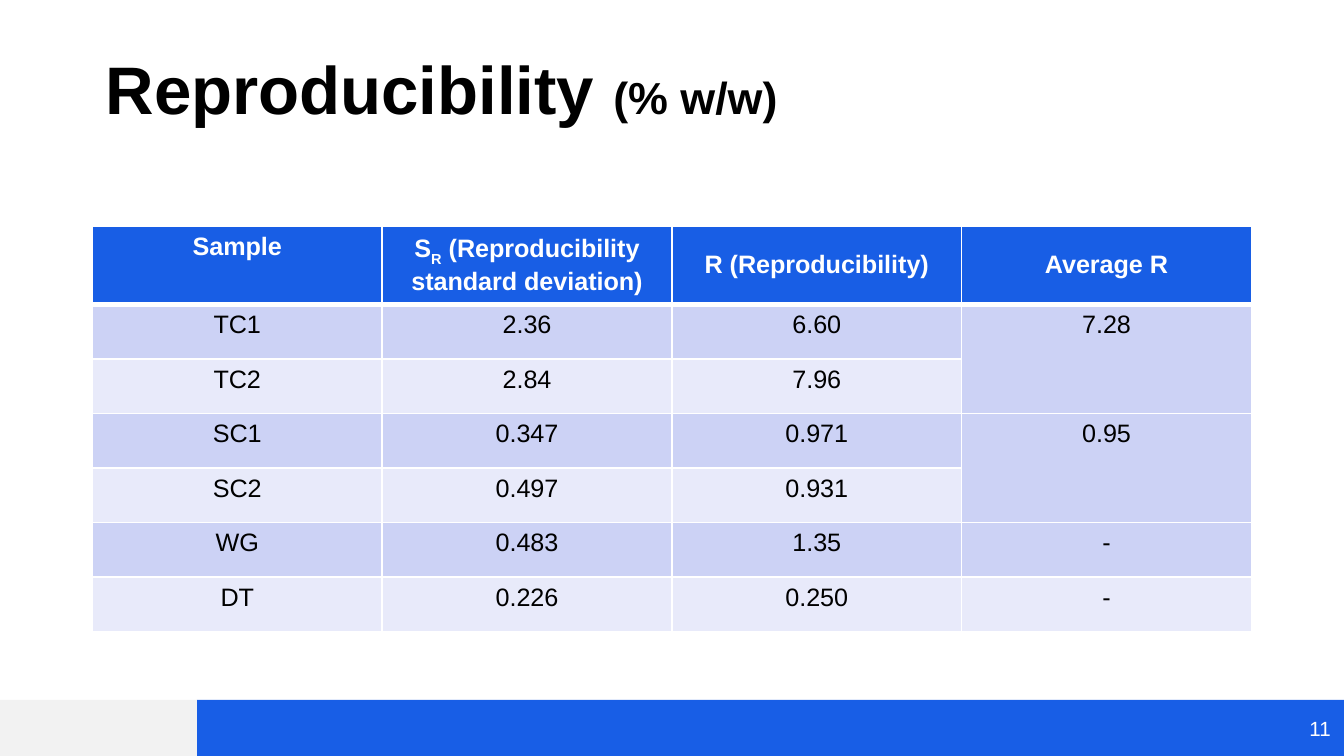
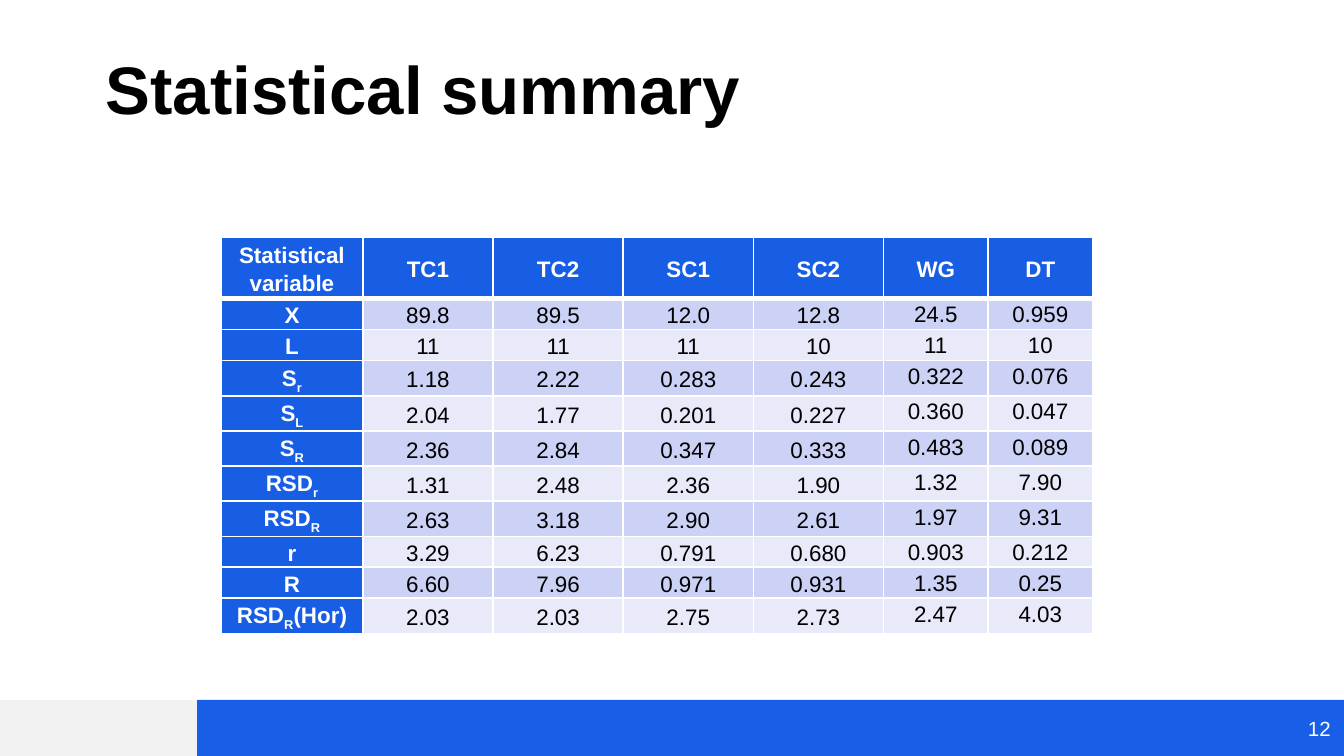
"""Build two slides of reproducibility and summary statistics tables."""
import dataclasses

import lxml.etree
import pptx
import pptx.dml.color
import pptx.enum.shapes
import pptx.enum.text
import pptx.oxml.ns
import pptx.util

Pt = pptx.util.Pt
Anchor = pptx.enum.text.MSO_ANCHOR
Align = pptx.enum.text.PP_ALIGN


@dataclasses.dataclass(frozen=True)
class Theme:
    font: str = "Arial"
    ink: str = "000000"
    white: str = "FFFFFF"
    band: str = "185EE6"
    corner: str = "F2F2F2"
    header: str = "185EE5"
    stripes: tuple = ("CCD2F5", "E8EAFA")
    title_size: float = 36
    unit_size: float = 24
    number_size: float = 11
    rule: float = 1
    header_rule: float = 3


THEME = Theme()
WIDTH, HEIGHT = 720, 405
FOOTER_TOP, CORNER_WIDTH, NUMBER_WIDTH = 375, 105.5, 40
TITLE_BOX = (49.5, 13.7, 621, 59)

SLIDES = [
    {
        "number": "11",
        "title": [("Reproducibility ", THEME.title_size), ("(% w/w)", THEME.unit_size)],
        "table": {
            "rows": [
                ("Sample", "S_R_ (Reproducibility standard deviation)", "R (Reproducibility)", "Average R"),
                ("TC1", "2.36", "6.60", "7.28"),
                ("TC2", "2.84", "7.96", None),
                ("SC1", "0.347", "0.971", "0.95"),
                ("SC2", "0.497", "0.931", None),
                ("WG", "0.483", "1.35", "-"),
                ("DT", "0.226", "0.250", "-"),
            ],
            "left": 49.5,
            "top": 121.25,
            "widths": [155.25] * 4,
            "heights": [39] + [29.25] * 6,
            "size": 13.5,
            "line_spacing": None,
            "margins": (7.2, 3.6),
            "label_column": False,
            "middle_header": (1, 2, 3),
            "middle_body": (),
        },
    },
    {
        "number": "12",
        "title": [("Statistical summary", THEME.title_size)],
        "table": {
            "rows": [
                ("Statistical variable", "TC1", "TC2", "SC1", "SC2", "WG", "DT"),
                ("X", "89.8", "89.5", "12.0", "12.8", "24.5", "0.959"),
                ("L", "11", "11", "11", "10", "11", "10"),
                ("S_r_", "1.18", "2.22", "0.283", "0.243", "0.322", "0.076"),
                ("S_L_", "2.04", "1.77", "0.201", "0.227", "0.360", "0.047"),
                ("S_R_", "2.36", "2.84", "0.347", "0.333", "0.483", "0.089"),
                ("RSD_r_", "1.31", "2.48", "2.36", "1.90", "1.32", "7.90"),
                ("RSD_R_", "2.63", "3.18", "2.90", "2.61", "1.97", "9.31"),
                ("r", "3.29", "6.23", "0.791", "0.680", "0.903", "0.212"),
                ("R", "6.60", "7.96", "0.971", "0.931", "1.35", "0.25"),
                ("RSD_R_(Hor)", "2.03", "2.03", "2.75", "2.73", "2.47", "4.03"),
            ],
            "left": 118.4,
            "top": 126.9,
            "widths": [76] + [69.75] * 4 + [56] * 2,
            "heights": [30.8] + [15.3] * 2 + [17.7] * 5 + [15.3] * 2 + [17.7],
            "size": 12,
            "line_spacing": 1.15,
            "margins": (5, 0),
            "label_column": True,
            "middle_header": range(7),
            "middle_body": range(5),
        },
    },
]


def paint(fill, color):
    fill.solid()
    fill.fore_color.rgb = pptx.dml.color.RGBColor.from_string(color)


def style(span, size, color, bold=False):
    span.font.name = THEME.font
    span.font.size = Pt(size)
    span.font.bold = bold
    span.font.color.rgb = pptx.dml.color.RGBColor.from_string(color)


def add_band(page, left, width, color):
    band = page.shapes.add_shape(
        pptx.enum.shapes.MSO_SHAPE.RECTANGLE,
        Pt(left), Pt(FOOTER_TOP), Pt(width), Pt(HEIGHT - FOOTER_TOP))
    band.shadow.inherit = False
    paint(band.fill, color)
    band.line.fill.background()


def add_text(page, place, pieces, color, anchor, align, bold=False, line_spacing=None):
    box = page.shapes.add_textbox(*map(Pt, place))
    box.text_frame.word_wrap = True
    box.text_frame.vertical_anchor = anchor
    para = box.text_frame.paragraphs[0]
    para.alignment = align
    para.line_spacing = line_spacing
    for text, size in pieces:
        span = para.add_run()
        span.text = text
        style(span, size, color, bold)


def add_borders(cell, bottom):
    sides = {"lnL": THEME.rule, "lnR": THEME.rule, "lnT": THEME.rule, "lnB": bottom}
    for side, width in sides.items():
        line = lxml.etree.SubElement(
            cell._tc.get_or_add_tcPr(), pptx.oxml.ns.qn(f"a:{side}"), w=str(Pt(width)))
        fill = lxml.etree.SubElement(line, pptx.oxml.ns.qn("a:solidFill"))
        lxml.etree.SubElement(fill, pptx.oxml.ns.qn("a:srgbClr"), val=THEME.white)


def fill_cell(cell, text, layout, row, column):
    is_header = row == 0
    is_label = is_header or (layout["label_column"] and column == 0)
    middle = layout["middle_header" if is_header else "middle_body"]
    cell.vertical_anchor = Anchor.MIDDLE if column in middle else Anchor.TOP
    side, edge = map(Pt, layout["margins"])
    cell.margin_left = cell.margin_right = side
    cell.margin_top = cell.margin_bottom = edge
    add_borders(cell, THEME.header_rule if is_header else THEME.rule)
    paint(cell.fill, THEME.header if is_label else THEME.stripes[(row - 1) % 2])
    para = cell.text_frame.paragraphs[0]
    para.alignment = Align.CENTER
    para.line_spacing = layout["line_spacing"]
    para.font.size = Pt(layout["size"])
    for index, piece in enumerate((text or "").split("_")):
        if piece:
            span = para.add_run()
            span.text = piece
            style(span, layout["size"], THEME.white if is_label else THEME.ink, is_label)
            if index % 2:
                span._r.get_or_add_rPr().set("baseline", "-25000")


def add_table(page, layout):
    rows, widths, heights = layout["rows"], layout["widths"], layout["heights"]
    table = page.shapes.add_table(
        len(rows), len(widths), Pt(layout["left"]), Pt(layout["top"]),
        Pt(sum(widths)), Pt(sum(heights))).table
    table.horz_banding = False
    for column, width in zip(table.columns, widths):
        column.width = Pt(width)
    for line, height in zip(table.rows, heights):
        line.height = Pt(height)
    for row, values in enumerate(rows):
        for column, text in enumerate(values):
            fill_cell(table.cell(row, column), text, layout, row, column)
            if text is None:
                table.cell(row - 1, column).merge(table.cell(row, column))


def add_page(deck, content):
    page = deck.slides.add_slide(deck.slide_layouts[6])
    add_band(page, CORNER_WIDTH, WIDTH - CORNER_WIDTH, THEME.band)
    add_band(page, 0, CORNER_WIDTH, THEME.corner)
    add_text(page, TITLE_BOX, content["title"], THEME.ink,
             Anchor.BOTTOM, Align.LEFT, bold=True, line_spacing=0.9)
    number_box = (WIDTH - NUMBER_WIDTH, FOOTER_TOP, NUMBER_WIDTH, HEIGHT - FOOTER_TOP)
    add_text(page, number_box, [(content["number"], THEME.number_size)],
             THEME.white, Anchor.MIDDLE, Align.RIGHT)
    add_table(page, content["table"])


def main():
    deck = pptx.Presentation()
    deck.slide_width, deck.slide_height = Pt(WIDTH), Pt(HEIGHT)
    for content in SLIDES:
        add_page(deck, content)
    deck.save("out.pptx")


if __name__ == "__main__":
    main()
